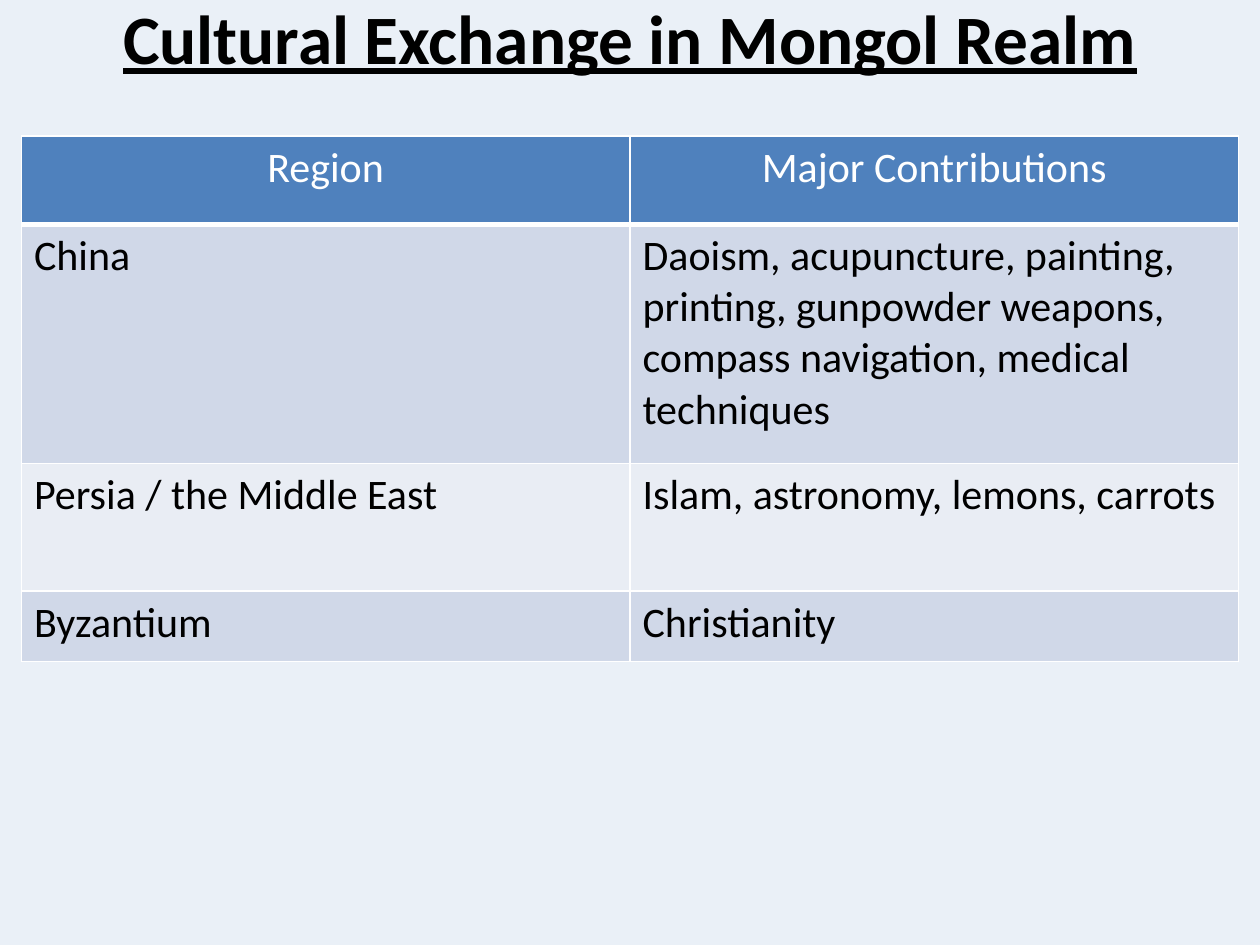
from dataclasses import dataclass

from lxml import etree
from pptx import Presentation
from pptx.dml.color import RGBColor
from pptx.enum.text import MSO_ANCHOR, MSO_AUTO_SIZE, PP_ALIGN
from pptx.oxml.ns import qn
from pptx.util import Inches, Pt

CENTER, LEFT = PP_ALIGN.CENTER, PP_ALIGN.LEFT
MIDDLE = MSO_ANCHOR.MIDDLE
NO_AUTOFIT = MSO_AUTO_SIZE.NONE
TITLE_ONLY = 5
SLIDE_WIDTH, SLIDE_HEIGHT = Inches(10), Inches(7.5)


@dataclass(frozen=True)
class Theme:
    font: str = "Calibri"
    background: str = "EAF0F7"
    ink: str = "000000"
    paper: str = "FFFFFF"
    header: str = "4F81BD"
    bands: tuple = ("D0D8E8", "E9EDF4")
    title_size: float = 39.6
    cell_size: float = 24
    rule: float = 1
    header_rule: float = 3


@dataclass(frozen=True)
class Entry:
    region: str
    contributions: str
    height: float


THEME = Theme()
TITLE = "Cultural Exchange in Mongol Realm"
ENTRIES = (
    Entry("Region", "Major Contributions", 0.7),
    Entry(
        "China",
        "Daoism, acupuncture, painting, printing, gunpowder weapons, "
        "compass navigation, medical techniques",
        1.9,
    ),
    Entry("Persia / the Middle East", "Islam, astronomy, lemons, carrots", 1.01),
    Entry("Byzantium", "Christianity", 0.56),
)


def write(frame, text: str, align, color: str, **formats) -> None:
    frame.text = text
    paragraph = frame.paragraphs[0]
    paragraph.alignment = align
    font = paragraph.runs[0].font
    font.color.rgb = RGBColor.from_string(color)
    for attribute, value in {"name": THEME.font, **formats}.items():
        setattr(font, attribute, value)


def add_borders(cell, bottom: float) -> None:
    properties = cell._tc.get_or_add_tcPr()
    widths = {"lnL": THEME.rule, "lnR": THEME.rule, "lnT": THEME.rule, "lnB": bottom}
    for side, width in widths.items():
        line = etree.SubElement(properties, qn(f"a:{side}"), w=str(Pt(width)))
        fill = etree.SubElement(line, qn("a:solidFill"))
        etree.SubElement(fill, qn("a:srgbClr"), val=THEME.paper)


def add_title(slide) -> None:
    title = slide.shapes.title
    place = {
        "left": int(SLIDE_WIDTH * 0.05),
        "top": Inches(0.08),
        "width": int(SLIDE_WIDTH * 0.9),
        "height": Inches(0.42),
    }
    for attribute, value in place.items():
        setattr(title, attribute, value)
    frame = title.text_frame
    for attribute, value in {
        "word_wrap": True,
        "auto_size": NO_AUTOFIT,
        "vertical_anchor": MIDDLE,
    }.items():
        setattr(frame, attribute, value)
    write(frame, TITLE, CENTER, THEME.ink,
          size=Pt(THEME.title_size), bold=True, underline=True)


def add_contributions(slide, entries: tuple[Entry, ...]) -> None:
    margin = Inches(0.17)
    heights = [Inches(entry.height) for entry in entries]
    table = slide.shapes.add_table(
        len(entries), 2, margin, Inches(1.08), SLIDE_WIDTH - 2 * margin, sum(heights)
    ).table
    for row, entry in enumerate(entries):
        table.rows[row].height = heights[row]
        is_header = row == 0
        fill = THEME.header if is_header else THEME.bands[(row - 1) % 2]
        for column, text in enumerate((entry.region, entry.contributions)):
            cell = table.cell(row, column)
            write(cell.text_frame, text, CENTER if is_header else LEFT,
                  THEME.paper if is_header else THEME.ink,
                  size=Pt(THEME.cell_size), bold=False)
            add_borders(cell, THEME.header_rule if is_header else THEME.rule)
            cell.fill.solid()
            cell.fill.fore_color.rgb = RGBColor.from_string(fill)


def main() -> None:
    deck = Presentation()
    deck.slide_width, deck.slide_height = SLIDE_WIDTH, SLIDE_HEIGHT
    slide = deck.slides.add_slide(deck.slide_layouts[TITLE_ONLY])
    backdrop = slide.background.fill
    backdrop.solid()
    backdrop.fore_color.rgb = RGBColor.from_string(THEME.background)
    add_title(slide)
    add_contributions(slide, ENTRIES)
    deck.save("out.pptx")


if __name__ == "__main__":
    main()
